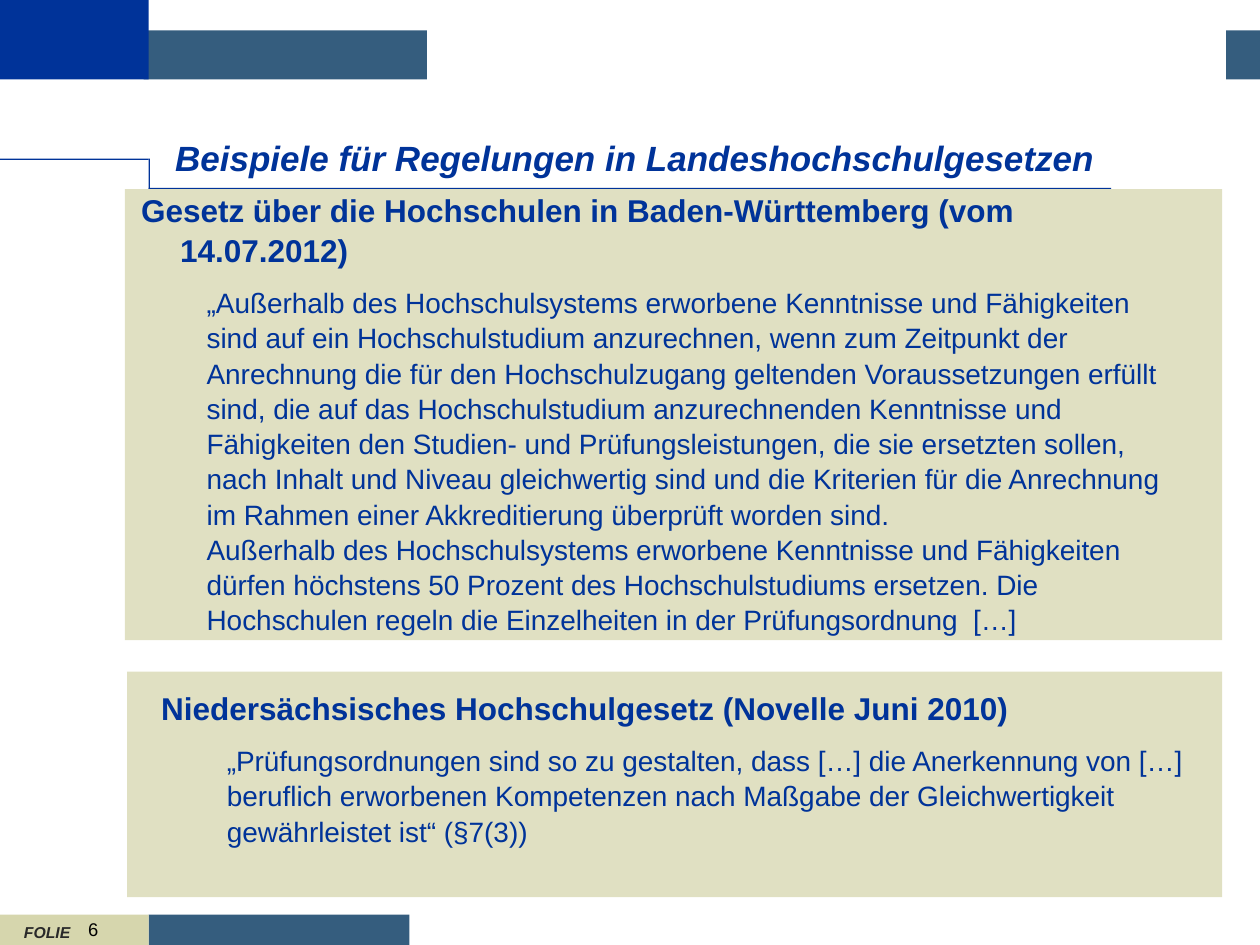
from dataclasses import dataclass

from pptx import Presentation
from pptx.dml.color import RGBColor
from pptx.enum.shapes import MSO_SHAPE
from pptx.enum.text import MSO_ANCHOR
from pptx.util import Inches, Pt

BLUE, STEEL, WHITE = "003399", "355D7E", "FFFFFF"
SAND, PALE_SAND = "D6D6AD", "E0E0C2"


@dataclass(frozen=True)
class Box:
    left: float
    top: float
    width: float
    height: float


@dataclass(frozen=True)
class Bar:
    box: Box
    fill: str


@dataclass(frozen=True)
class Style:
    size: float
    color: str = BLUE
    bold: bool = False
    italic: bool = False
    level: int = 0
    margin: float = 0
    indent: float = 0
    before: float = 0
    spacing: float = 1.0


@dataclass(frozen=True)
class Para:
    text: str
    style: Style


TITLE = Style(20, bold=True, italic=True, spacing=1.05)
HEADING = Style(18, bold=True, margin=0.31, indent=-0.31, spacing=1.05)
QUOTE = Style(16, level=1, margin=0.52, before=9, spacing=1.05)
LABEL = Style(9, "292929", bold=True, italic=True)
NUMBER = Style(10.5, "000000")

FRAME = [
    Bar(Box(1.14, 0.24, 8.86, 0.39), STEEL),
    Bar(Box(3.39, 0, 4.29, 0.84), WHITE),
    Bar(Box(0, 0, 1.18, 0.63), BLUE),
    Bar(Box(1.18, 7.26, 2.07, 0.24), STEEL),
    Bar(Box(0, 7.26, 1.18, 0.24), SAND),
    Bar(Box(0, 1.26, 1.18, 0.01), BLUE),
    Bar(Box(1.18, 1.49, 7.64, 0.01), BLUE),
    Bar(Box(1.18, 1.26, 0.01, 0.24), BLUE),
    Bar(Box(7.13, 0, 2.6, 0.84), WHITE),
]

BADEN = [
    Para("Gesetz über die Hochschulen in Baden-Württemberg (vom 14.07.2012)", HEADING),
    Para(
        "„Außerhalb des Hochschulsystems erworbene Kenntnisse und Fähigkeiten "
        "sind auf ein Hochschulstudium anzurechnen, wenn zum Zeitpunkt der "
        "Anrechnung die für den Hochschulzugang geltenden Voraussetzungen erfüllt "
        "sind, die auf das Hochschulstudium anzurechnenden Kenntnisse und "
        "Fähigkeiten den Studien- und Prüfungsleistungen, die sie ersetzten sollen, "
        "nach Inhalt und Niveau gleichwertig sind und die Kriterien für die Anrechnung "
        "im Rahmen einer Akkreditierung überprüft worden sind.\n"
        "Außerhalb des Hochschulsystems erworbene Kenntnisse und Fähigkeiten "
        "dürfen höchstens 50 Prozent des Hochschulstudiums ersetzen. Die "
        "Hochschulen regeln die Einzelheiten in der Prüfungsordnung  […]",
        QUOTE,
    ),
]

NIEDERSACHSEN = [
    Para("Niedersächsisches Hochschulgesetz (Novelle Juni 2010)", HEADING),
    Para(
        "„Prüfungsordnungen sind so zu gestalten, dass […] die Anerkennung von […] "
        "beruflich erworbenen Kompetenzen nach Maßgabe der Gleichwertigkeit "
        "gewährleistet ist“ (§7(3))",
        QUOTE,
    ),
]


def rgb(value: str) -> RGBColor:
    return RGBColor.from_string(value)


def place(box: Box) -> list:
    return [Inches(v) for v in (box.left, box.top, box.width, box.height)]


def add_bar(shapes, bar: Bar) -> None:
    s = shapes.add_shape(MSO_SHAPE.RECTANGLE, *place(bar.box))
    s.shadow.inherit = False
    s.fill.solid()
    s.fill.fore_color.rgb = rgb(bar.fill)
    s.line.fill.background()


def format_paragraph(p, style: Style) -> None:
    p.level = style.level
    p.space_before = Pt(style.before)
    p.line_spacing = style.spacing
    pPr = p._p.get_or_add_pPr()
    pPr.set("marL", str(Inches(style.margin)))
    pPr.set("indent", str(Inches(style.indent)))


def add_run(p, text: str, style: Style) -> None:
    r = p.add_run()
    r.text = text
    r.font.name = "Arial"
    r.font.size = Pt(style.size)
    r.font.bold = style.bold
    r.font.italic = style.italic
    r.font.color.rgb = rgb(style.color)


def add_text(shapes, box: Box, paras: list[Para], inset: bool = False,
             anchor: MSO_ANCHOR = MSO_ANCHOR.TOP) -> None:
    tf = shapes.add_textbox(*place(box)).text_frame
    tf.word_wrap = True
    tf.vertical_anchor = anchor
    if not inset:
        tf.margin_left = tf.margin_top = tf.margin_right = tf.margin_bottom = 0
    for i, para in enumerate(paras):
        p = tf.add_paragraph() if i else tf.paragraphs[0]
        format_paragraph(p, para.style)
        for j, line in enumerate(para.text.split("\n")):
            if j:
                p.add_line_break()
            add_run(p, line, para.style)


def main() -> None:
    prs = Presentation()
    prs.slide_width, prs.slide_height = Inches(10), Inches(7.5)
    shapes = prs.slides.add_slide(prs.slide_layouts[6]).shapes

    for bar in FRAME:
        add_bar(shapes, bar)
    add_text(shapes, Box(0.19, 7.32, 0.64, 0.15), [Para("FOLIE", LABEL)],
             anchor=MSO_ANCHOR.BOTTOM)

    add_bar(shapes, Bar(Box(0.99, 1.5, 8.71, 3.58), PALE_SAND))
    add_text(shapes, Box(0.6, 7.24, 0.62, 0.21), [Para("6", NUMBER)], inset=True)

    group = shapes.add_group_shape().shapes
    add_bar(group, Bar(Box(1.01, 5.33, 8.69, 1.79), PALE_SAND))
    add_text(group, Box(1.28, 5.45, 8.17, 1.25), NIEDERSACHSEN)

    title = Para("Beispiele für Regelungen in Landeshochschulgesetzen", TITLE)
    add_text(shapes, Box(1.39, 1.07, 8.13, 0.43), [title])
    add_text(shapes, Box(1.12, 1.5, 8.1, 3.76), BADEN)

    prs.save("out.pptx")


if __name__ == "__main__":
    main()
